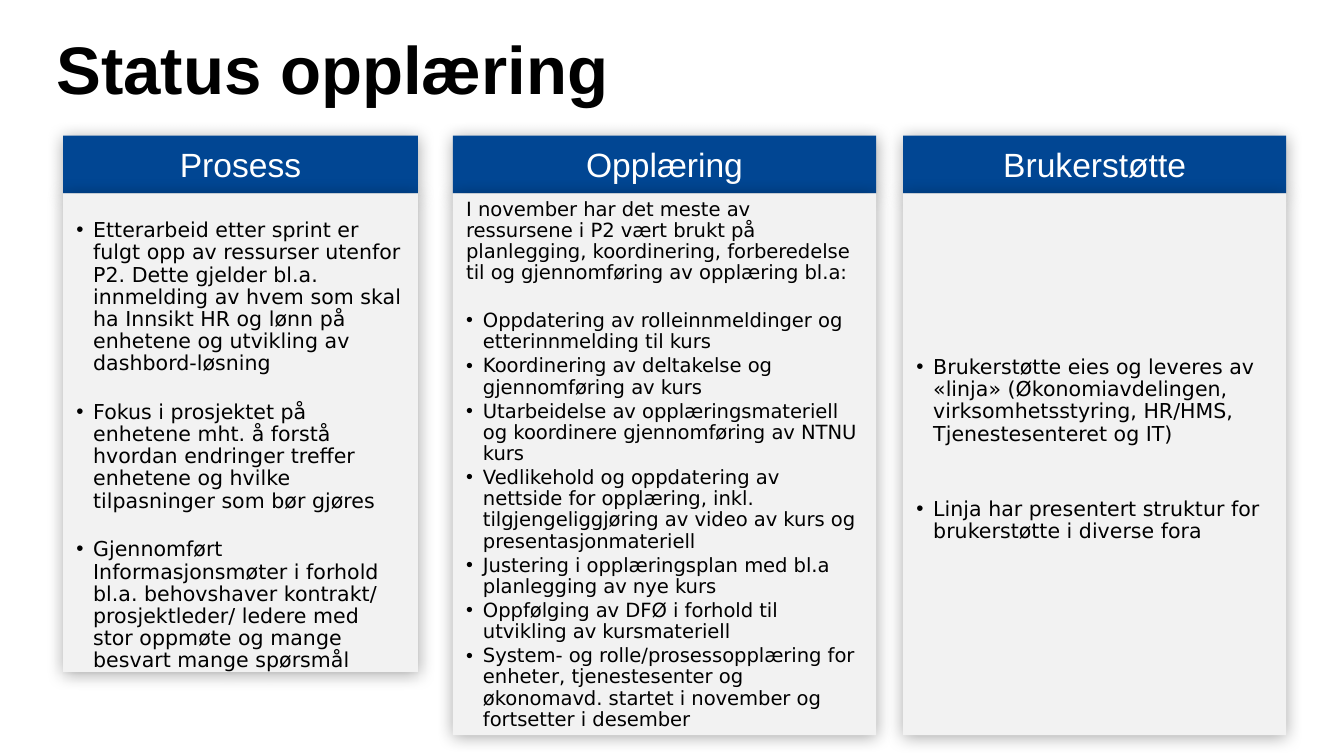
from lxml import etree
from pptx import Presentation
from pptx.dml.color import RGBColor
from pptx.enum.shapes import MSO_SHAPE
from pptx.enum.text import MSO_ANCHOR, PP_ALIGN
from pptx.oxml.ns import qn
from pptx.util import Pt

RECT = MSO_SHAPE.RECTANGLE
MIDDLE, TOP = MSO_ANCHOR.MIDDLE, MSO_ANCHOR.TOP
LEFT, CENTER = PP_ALIGN.LEFT, PP_ALIGN.CENTER

HEADER_TOP, HEADER_HEIGHT = 72.72, 30.96
PANEL_TOP = HEADER_TOP + HEADER_HEIGHT
INDENT = 9


def color(value):
    return RGBColor.from_string(value)


class StatusSlide:
    heading_font, body_font = "Arial", "DejaVu Sans"
    black, white, blue, grey = "000000", "FFFFFF", "014693", "F2F2F2"

    def __init__(self, presentation):
        self.slide = presentation.slides.add_slide(presentation.slide_layouts[5])

    def text(self, paragraph, words, font, size, fill, align=LEFT, bold=False):
        paragraph.alignment = align
        run = paragraph.add_run()
        run.text = words
        run.font.name, run.font.size, run.font.bold = font, Pt(size), bold
        run.font.color.rgb = color(fill)

    def title(self, words, left, top, width, height):
        title = self.slide.shapes.title
        title.left, title.top, title.width, title.height = map(Pt, (left, top, width, height))
        title.text_frame.vertical_anchor = MIDDLE
        self.text(title.text_frame.paragraphs[0], words, self.heading_font, 36,
                  self.black, bold=True)

    def card(self, left, top, width, height, fill):
        card = self.slide.shapes.add_shape(RECT, Pt(left), Pt(top), Pt(width), Pt(height))
        card.fill.solid()
        card.fill.fore_color.rgb = color(fill)
        card.line.fill.background()
        self.soft_shadow(card)
        card.text_frame.word_wrap = True
        return card.text_frame

    def soft_shadow(self, card):
        card.shadow.inherit = False
        effects = card._element.spPr.find(qn("a:effectLst"))
        shadow = etree.SubElement(effects, qn("a:outerShdw"), blurRad=str(Pt(9)),
                                  dist=str(Pt(1)), dir="5400000", rotWithShape="0")
        shade = etree.SubElement(shadow, qn("a:srgbClr"), val=self.black)
        etree.SubElement(shade, qn("a:alpha"), val="35000")

    def header(self, words, left, width):
        frame = self.card(left, HEADER_TOP, width, HEADER_HEIGHT, self.blue)
        frame.vertical_anchor = MIDDLE
        self.text(frame.paragraphs[0], words, self.heading_font, 18, self.white, CENTER)

    def bullet(self, paragraph):
        properties = paragraph._p.get_or_add_pPr()
        properties.set("marL", str(Pt(INDENT)))
        properties.set("indent", str(-Pt(INDENT)))
        etree.SubElement(properties, qn("a:buFont"), typeface=self.heading_font)
        etree.SubElement(properties, qn("a:buChar"), char="•")

    def panel(self, left, width, height, inset, size, gap, points, intro=None):
        frame = self.card(left, PANEL_TOP, width, height, self.grey)
        frame.vertical_anchor = TOP
        frame.margin_top, frame.margin_bottom = Pt(inset), 0
        entries = [intro] + points if intro else points
        for index, words in enumerate(entries):
            paragraph = frame.paragraphs[0] if index == 0 else frame.add_paragraph()
            if words != intro:
                self.bullet(paragraph)
            paragraph.line_spacing = 0.9
            if index:
                paragraph.space_before = Pt(14.4 if intro and index == 1 else gap)
            self.text(paragraph, words, self.body_font, size, self.black)


# Columns: heading, left, width, then panel height, top inset, text size, gap
COLUMNS = [
    ("Prosess", 33.84, 190.08, 256.32, 14.2, 11, 14.2, [
        "Etterarbeid etter sprint er fulgt opp av ressurser utenfor P2. Dette gjelder bl.a. "
        "innmelding av hvem som skal ha Innsikt HR og lønn på enhetene og utvikling av "
        "dashbord-løsning",
        "Fokus i prosjektet på enhetene mht. å forstå hvordan endringer treffer enhetene "
        "og hvilke tilpasninger som bør gjøres",
        "Gjennomført Informasjonsmøter i forhold bl.a. behovshaver kontrakt/ "
        "prosjektleder/ ledere med stor oppmøte og mange besvart mange spørsmål",
    ], None),
    ("Opplæring", 242.64, 226.8, 290.16, 3, 10.5, 1.6, [
        "Oppdatering av rolleinnmeldinger og etterinnmelding til kurs",
        "Koordinering av deltakelse og gjennomføring av kurs",
        "Utarbeidelse av opplæringsmateriell og koordinere gjennomføring av NTNU kurs",
        "Vedlikehold og oppdatering av nettside for opplæring, inkl. tilgjengeliggjøring "
        "av video av kurs og presentasjonmateriell",
        "Justering i opplæringsplan med bl.a planlegging av nye kurs",
        "Oppfølging av DFØ i forhold til utvikling av kursmateriell",
        "System- og rolle/prosessopplæring for enheter, tjenestesenter og økonomavd. "
        "startet i november og fortsetter i desember",
    ], "I november har det meste av ressursene i P2 vært brukt på planlegging, "
       "koordinering, forberedelse til og gjennomføring av opplæring bl.a:"),
    ("Brukerstøtte", 483.84, 205.2, 290.16, 87.5, 11, 28.3, [
        "Brukerstøtte eies og leveres av «linja» (Økonomiavdelingen, virksomhetsstyring, "
        "HR/HMS, Tjenestesenteret og IT)",
        "Linja har presentert struktur for brukerstøtte i diverse fora",
    ], None),
]


def main():
    presentation = Presentation()
    presentation.slide_width, presentation.slide_height = Pt(720), Pt(405)
    status = StatusSlide(presentation)

    # Title
    status.title("Status opplæring", 23.04, 10.8, 663.12, 51.12)

    # Column headings, then the panels whose shadows fall on them
    for heading, left, width, *_ in COLUMNS:
        status.header(heading, left, width)
    for _, left, width, *content in COLUMNS:
        status.panel(left, width, *content)

    presentation.save("out.pptx")


if __name__ == "__main__":
    main()
